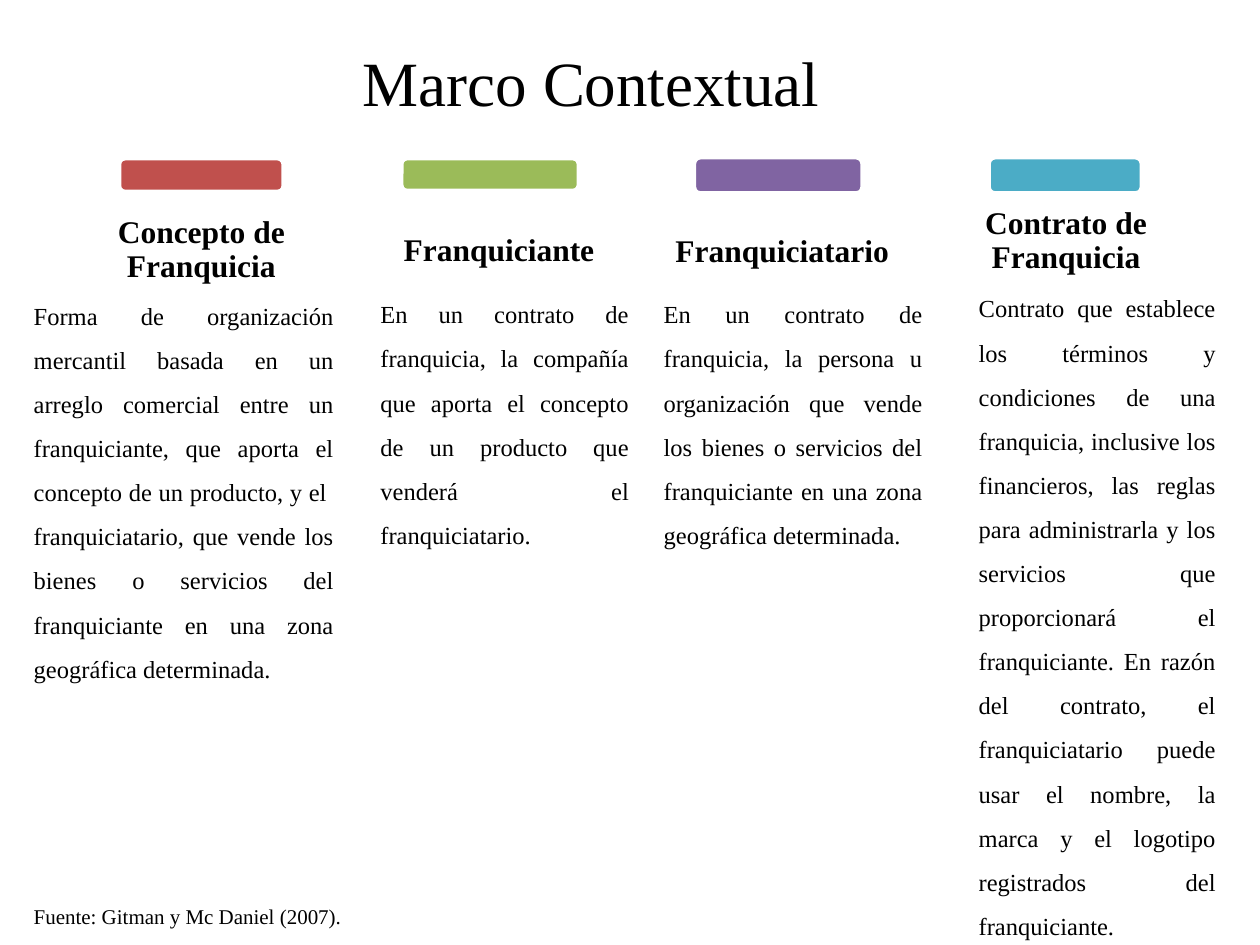
from pptx import Presentation
from pptx import util as u
from pptx.dml import color
from pptx.enum import shapes, text

COLORS = {
    "text": "000000",
    "line": "FFFFFF",
    "red": "C0504D",
    "green": "9BBB59",
    "purple": "8064A2",
    "blue": "4BACC6",
}
FONT = "Times New Roman"


def rgb(name):
    return color.RGBColor.from_string(COLORS[name])


def write(box, content, size=14, bold=False, align="LEFT", spacing=1.0,
          anchor="TOP", insets=(0.25, 0.13, 0.25, 0.13)):
    frame = box.text_frame
    frame.word_wrap = True
    frame.auto_size = text.MSO_AUTO_SIZE.NONE
    frame.vertical_anchor = getattr(text.MSO_ANCHOR, anchor)
    frame.margin_left, frame.margin_top, frame.margin_right, frame.margin_bottom = map(u.Cm, insets)
    para = frame.paragraphs[0]
    para.alignment = getattr(text.PP_ALIGN, align)
    para.line_spacing = spacing
    span = para.add_run()
    span.text = content
    span.font.name = FONT
    span.font.size = u.Pt(size)
    span.font.bold = bold
    span.font.color.rgb = rgb("text")


deck = Presentation()
deck.slide_width, deck.slide_height = u.Cm(25.4), u.Cm(19.05)
page = deck.slides.add_slide(deck.slide_layouts[5])

title = page.shapes.title
title.left, title.top, title.width, title.height = map(u.Cm, (0.91, 0.74, 22.02, 1.78))
write(title, "Marco Contextual", size=36, align="CENTER", anchor="MIDDLE")

columns = [
    ("red", (2.41, 3.2, 3.3, 0.66),
     "Concepto de Franquicia", (1.42, 4.01),
     "Forma de organización mercantil basada en un arreglo comercial entre un "
     "franquiciante, que aporta el concepto de un producto, y el  franquiciatario, "
     "que vende los bienes o servicios del franquiciante en una zona geográfica "
     "determinada.", (0.43, 5.64, 6.55, 9.09)),
    ("green", (8.1, 3.2, 3.56, 0.64),
     "Franquiciante", (7.42, 4.37),
     "En un contrato de franquicia, la compañía que aporta el concepto de un "
     "producto que venderá el franquiciatario.", (7.42, 5.61, 5.51, 5.54)),
    ("purple", (14.0, 3.18, 3.38, 0.71),
     "Franquiciatario", (13.13, 4.39),
     "En un contrato de franquicia, la persona u organización que vende los bienes "
     "o servicios del franquiciante en una zona geográfica determinada.",
     (13.13, 5.61, 5.72, 5.54)),
    ("blue", (19.94, 3.18, 3.07, 0.71),
     "Contrato de Franquicia", (18.85, 3.81),
     "Contrato que establece los términos y condiciones de una franquicia, inclusive "
     "los financieros, las reglas para administrarla y los servicios que "
     "proporcionará el franquiciante. En razón del contrato, el franquiciatario "
     "puede usar el nombre, la marca y el logotipo registrados del franquiciante.",
     (19.48, 5.49, 5.28, 13.61)),
]

headings = page.shapes.add_group_shape()
for fill, bar_place, heading, heading_corner, body, body_place in columns:
    bar = headings.shapes.add_shape(shapes.MSO_SHAPE.ROUNDED_RECTANGLE, *map(u.Cm, bar_place))
    bar.shadow.inherit = False
    bar.fill.solid()
    bar.fill.fore_color.rgb = rgb(fill)
    bar.line.color.rgb = rgb("line")
    bar.line.width = u.Pt(2)

    heading_box = headings.shapes.add_textbox(*map(u.Cm, (*heading_corner, 5.28, 1.96)))
    write(heading_box, heading, size=18, bold=True, align="CENTER", spacing=0.9,
          insets=(0.36, 0.36, 0.36, 0))

    body_box = page.shapes.add_textbox(*map(u.Cm, body_place))
    write(body_box, body, align="JUSTIFY", spacing=1.5)

source_box = page.shapes.add_textbox(*map(u.Cm, (0.43, 18.08, 11.86, 0.76)))
write(source_box, "Fuente: Gitman y Mc Daniel (2007).", size=12)

deck.save("out.pptx")
